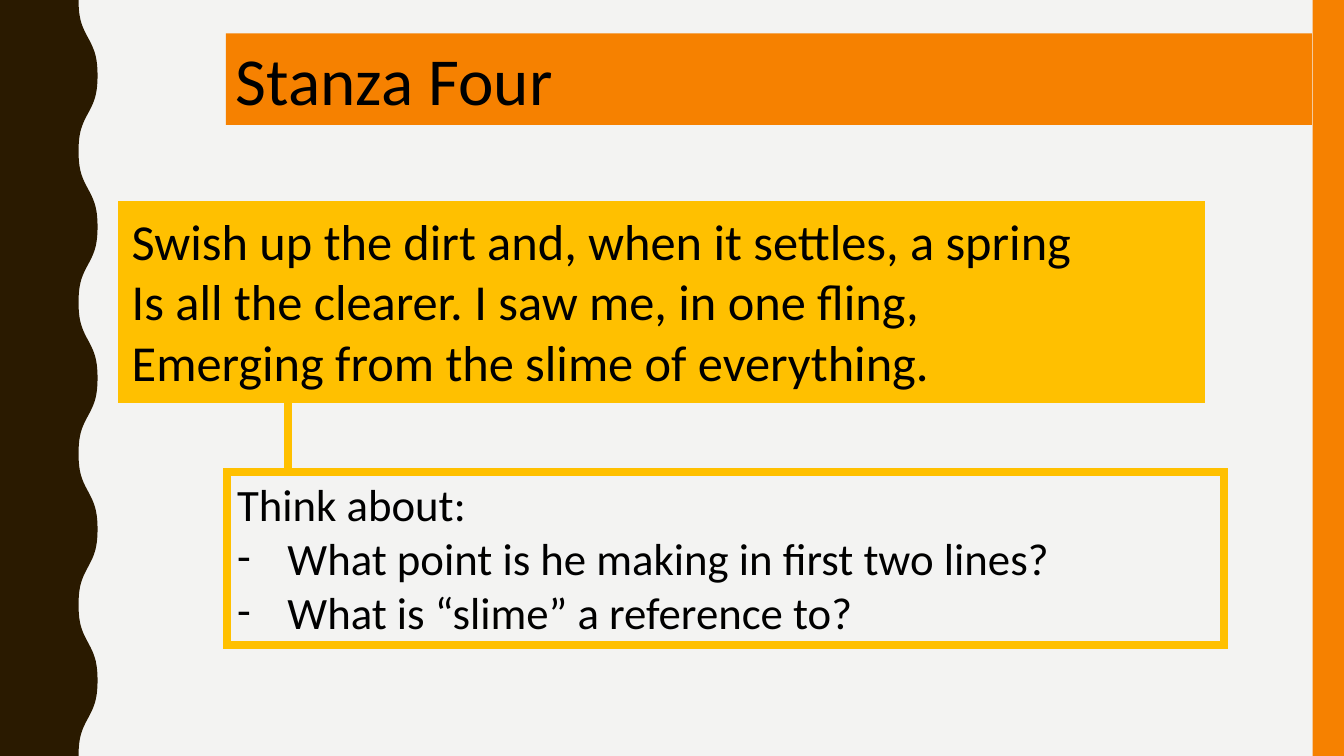
from lxml.etree import SubElement
from pptx import Presentation
from pptx.dml.color import RGBColor
from pptx.enum.shapes import MSO_CONNECTOR, MSO_SHAPE
from pptx.enum.text import MSO_ANCHOR, MSO_AUTO_SIZE, PP_ALIGN
from pptx.oxml.ns import qn
from pptx.util import Cm, Pt

PAPER = RGBColor(0xF3, 0xF3, 0xF2)
BROWN = RGBColor(0x2A, 0x1A, 0x00)
ORANGE = RGBColor(0xF6, 0x81, 0x00)
GOLD = RGBColor(0xFF, 0xC0, 0x00)
BLACK = RGBColor(0x00, 0x00, 0x00)

FONT = "Calibri"
FRAME_WIDTH = Pt(6)
SLIDE_WIDTH, SLIDE_HEIGHT = 33.87, 19.05
SIDE_BAR_LEFT = 33.08
TITLE_LEFT = 5.69
WAVE_COUNT = 5
WAVE_HEIGHT = SLIDE_HEIGHT / WAVE_COUNT
WAVE_MIDDLE = 2.22
CURVE_STEPS = 12

VERSE = [
    "Swish up the dirt and, when it settles, a spring",
    "Is all the clearer. I saw me, in one fling,",
    "Emerging from the slime of everything.",
]
PROMPT = "Think about:"
QUESTIONS = [
    "What point is he making in first two lines?",
    "What is “slime” a reference to?",
]


def fill_plain(shape, color):
    shape.fill.solid()
    shape.fill.fore_color.rgb = color
    shape.line.fill.background()
    shape.shadow.inherit = False


def bezier(points, t):
    weights = ((1 - t) ** 3, 3 * t * (1 - t) ** 2, 3 * t * t * (1 - t), t ** 3)
    return tuple(sum(weight * value for weight, value in zip(weights, axis))
                 for axis in zip(*points))


def wave_points():
    """Return one wave from trough to trough, in centimetres."""
    controls = [(1.98, 0), (1.98, 0.5), (2.08, 0.69),
                (WAVE_MIDDLE, WAVE_HEIGHT / 4)]
    quarter = [bezier(controls, step / CURVE_STEPS)
               for step in range(CURVE_STEPS + 1)]
    half = quarter + [(2 * WAVE_MIDDLE - x, WAVE_HEIGHT / 2 - y)
                      for x, y in reversed(quarter)]
    return half + [(x, WAVE_HEIGHT - y) for x, y in reversed(half)]


def add_wavy_edge(slide):
    outline = [(x, y + number * WAVE_HEIGHT)
               for number in range(WAVE_COUNT) for x, y in wave_points()]
    outline.append((0, SLIDE_HEIGHT))
    builder = slide.shapes.build_freeform(0, 0)
    builder.add_line_segments([(Cm(x), Cm(y)) for x, y in outline], close=True)
    fill_plain(builder.convert_to_shape(), BROWN)


def add_side_bar(slide):
    bar = slide.shapes.add_shape(
        MSO_SHAPE.RECTANGLE, Cm(SIDE_BAR_LEFT), 0,
        Cm(SLIDE_WIDTH - SIDE_BAR_LEFT), Cm(SLIDE_HEIGHT))
    fill_plain(bar, ORANGE)


def place(shape, left, top, width, height):
    shape.left, shape.top = Cm(left), Cm(top)
    shape.width, shape.height = Cm(width), Cm(height)


def write_lines(shape, lines, size):
    """Set one left-aligned paragraph for each line in a box of fixed size."""
    frame = shape.text_frame
    frame.text = "\n".join(lines)
    frame.word_wrap = True
    frame.auto_size = MSO_AUTO_SIZE.NONE
    frame.vertical_anchor = MSO_ANCHOR.TOP
    for paragraph in frame.paragraphs:
        paragraph.alignment = PP_ALIGN.LEFT
        paragraph.space_before = Pt(0)
        for run in paragraph.runs:
            run.font.name = FONT
            run.font.size = Pt(size)
            run.font.color.rgb = BLACK


def draw_gold_line(shape):
    """Draw a thick gold line with square corners."""
    shape.line.color.rgb = GOLD
    shape.line.width = FRAME_WIDTH
    line = shape._element.spPr.find(qn("a:ln"))
    SubElement(line, qn("a:miter"), lim="800000")


def set_bullet(paragraph, mark=None):
    """Give the paragraph a hanging bullet, or none without a mark."""
    properties = paragraph._p.get_or_add_pPr()
    indent = Cm(1.27) if mark else 0
    properties.set("marL", str(indent))
    properties.set("indent", str(-indent))
    if mark:
        SubElement(properties, qn("a:buFont"), typeface=FONT)
        SubElement(properties, qn("a:buChar"), char=mark)
    else:
        SubElement(properties, qn("a:buNone"))


def add_title(slide):
    title = slide.shapes.title
    place(title, TITLE_LEFT, 0.84, SIDE_BAR_LEFT - TITLE_LEFT - 0.02, 2.31)
    write_lines(title, ["Stanza Four"], 48)
    title.fill.solid()
    title.fill.fore_color.rgb = ORANGE


def add_verse(slide):
    verse = slide.shapes.add_textbox(Cm(3.07), Cm(5.16), Cm(27.2), Cm(4.88))
    write_lines(verse, VERSE, 36)
    verse.fill.solid()
    verse.fill.fore_color.rgb = GOLD
    draw_gold_line(verse)


def add_questions(slide):
    questions = slide.placeholders[1]
    place(questions, 5.72, 11.89, 25.12, 4.37)
    write_lines(questions, [PROMPT] + QUESTIONS, 32)
    draw_gold_line(questions)
    prompt, *items = questions.text_frame.paragraphs
    set_bullet(prompt)
    for item in items:
        set_bullet(item, "-")


def add_link(slide):
    x = Cm(7.26)
    link = slide.shapes.add_connector(
        MSO_CONNECTOR.STRAIGHT, x, Cm(10.03), x, Cm(11.89))
    draw_gold_line(link)
    SubElement(link._element.spPr, qn("a:effectLst"))


def main():
    presentation = Presentation()
    presentation.slide_width = Cm(SLIDE_WIDTH)
    presentation.slide_height = Cm(SLIDE_HEIGHT)
    slide = presentation.slides.add_slide(presentation.slide_layouts[1])
    slide.background.fill.solid()
    slide.background.fill.fore_color.rgb = PAPER
    add_wavy_edge(slide)
    add_side_bar(slide)
    add_title(slide)
    add_verse(slide)
    add_questions(slide)
    add_link(slide)
    presentation.save("out.pptx")


if __name__ == "__main__":
    main()
